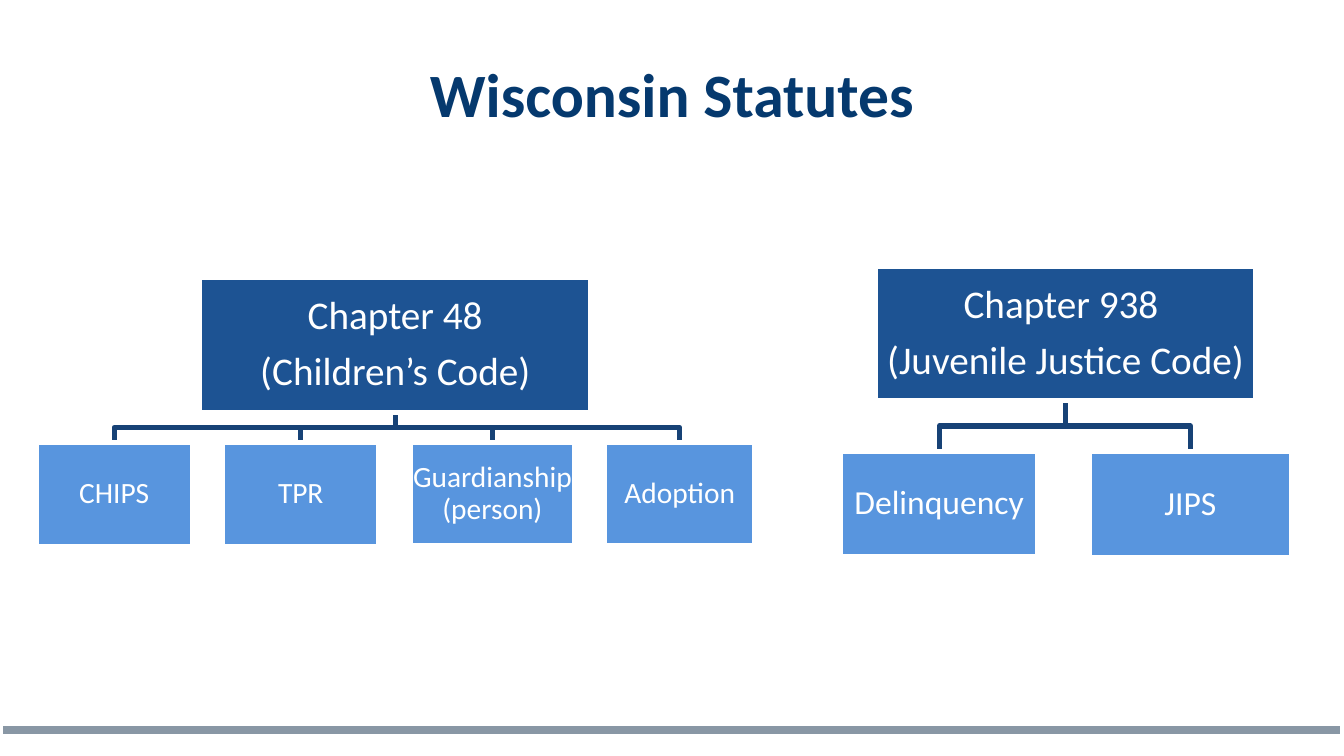
from pptx import Presentation
from pptx.dml.color import RGBColor as Rgb
from pptx.enum.shapes import MSO_CONNECTOR as Conn, MSO_SHAPE as Shape
from pptx.enum.text import MSO_ANCHOR as Anchor, PP_ALIGN as Align
from pptx.oxml.ns import qn
from pptx.util import Cm, Pt
from lxml.etree import SubElement

HUES = {"title": "05396E", "head": "1D5393", "leaf": "5895DE",
        "link": "174276", "bar": "8997A5", "white": "FFFFFF"}


class Deck:
    """Holds the style and the current slide."""
    font = "Calibri"
    edge = 3.78

    def __init__(self, wide, high):
        self.prs = Presentation()
        self.prs.slide_width, self.prs.slide_height = Cm(wide), Cm(high)
        self.slide = self.prs.slides.add_slide(self.prs.slide_layouts[6])
        self.items = self.slide.shapes

    def hue(self, name):
        return Rgb.from_string(HUES[name])

    def line(self, shape, hue, width):
        shape.line.color.rgb = self.hue(hue)
        shape.line.width = Pt(width)

    def label(self, shape, lines, size, hue, pad, bold=False, **form):
        frame = shape.text_frame
        style = {"word_wrap": True, "vertical_anchor": Anchor.MIDDLE}
        for side in ("left", "top", "right", "bottom"):
            style["margin_" + side] = Cm(pad)
        for key, value in style.items():
            setattr(frame, key, value)
        for num, text in enumerate(lines):
            para = frame.add_paragraph() if num else frame.paragraphs[0]
            for key, value in {"alignment": Align.CENTER, **form}.items():
                setattr(para, key, value)
            run = para.add_run()
            run.text = text
            look = {"name": self.font, "size": Pt(size), "bold": bold}
            for key, value in look.items():
                setattr(run.font, key, value)
            run.font.color.rgb = self.hue(hue)

    def title(self, text, x, y, w, h):
        box = self.items.add_textbox(Cm(x), Cm(y), Cm(w), Cm(h))
        self.label(box, [text], 44, "title", 0.13, bold=True)

    def rule(self, x, y, end):
        bar = self.items.add_connector(Conn.STRAIGHT, Cm(x), Cm(y), Cm(end), Cm(y))
        self.line(bar, "bar", 6)
        SubElement(bar._element.spPr, qn("a:effectLst"))

    def box(self, lines, spot, hue, size, pad):
        box = self.items.add_shape(Shape.RECTANGLE, *map(Cm, spot))
        box.shadow.inherit = False
        box.fill.solid()
        box.fill.fore_color.rgb = self.hue(hue)
        self.line(box, "white", self.edge)
        self.label(box, lines, size, "white", pad,
                   line_spacing=0.9, space_after=Pt(0.35 * size))

    def elbow(self, x, y, far, low):
        mid = (y + low) / 2
        form = self.items.build_freeform(Cm(x), Cm(y))
        form.add_line_segments([(Cm(a), Cm(b)) for a, b in
                                ((x, mid), (far, mid), (far, low))], close=False)
        link = form.convert_to_shape()
        link.shadow.inherit = False
        link.fill.background()
        self.line(link, "link", self.edge)

    def tree(self, head, spot, top, leaves, size, pad):
        x, y, w, h = spot
        for _, left, wide, _ in reversed(leaves):
            self.elbow(x + w / 2, y + h, left + wide / 2, top)
        self.box(head, spot, "head", 28, 0.05)
        for text, left, wide, high in leaves:
            self.box([text], (left, top, wide, high), "leaf", size, pad)


def main():
    deck = Deck(33.87, 19.05)

    # Footer rule and title
    deck.rule(0.08, 18.4, 33.78)
    deck.title("Wisconsin Statutes", 1.7, 0.76, 30.48, 3.18)

    # Children's code: leaf text, left, width, height
    deck.tree(["Chapter 48", "(Children’s Code)"], (5.03, 6.99, 9.86, 3.4), 11.15,
              [("CHIPS", 0.91, 3.94, 2.62),
               ("TPR", 5.61, 3.94, 2.62),
               ("Guardianship (person)", 10.34, 4.14, 2.59),
               ("Adoption", 15.24, 3.78, 2.59)], 21, 0.03)

    # Juvenile justice code
    deck.tree(["Chapter 938 ", "(Juvenile Justice Code)"],
              (22.05, 6.71, 9.6, 3.38), 11.38,
              [("Delinquency", 21.18, 4.98, 2.64),
               ("JIPS", 27.46, 5.08, 2.67)], 24, 0.05)

    deck.prs.save("out.pptx")


if __name__ == "__main__":
    main()
